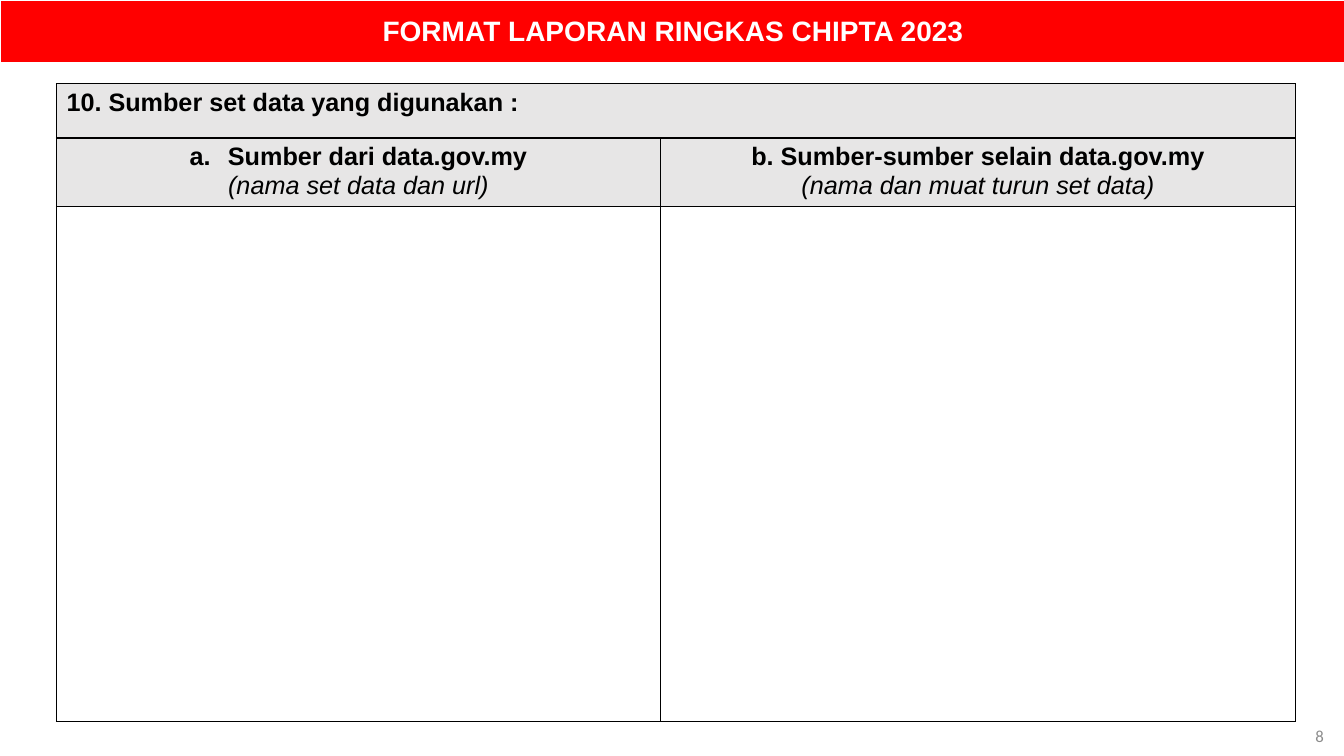
"""Build the data source form slide of the CHIPTA 2023 short report."""
from lxml import etree
from pptx import Presentation
from pptx.dml.color import RGBColor
from pptx.enum.text import MSO_ANCHOR, PP_ALIGN
from pptx.oxml.ns import qn
from pptx.util import Inches, Pt

LEFT, CENTER, RIGHT = PP_ALIGN.LEFT, PP_ALIGN.CENTER, PP_ALIGN.RIGHT
TOP, MIDDLE = MSO_ANCHOR.TOP, MSO_ANCHOR.MIDDLE
BLANK_LAYOUT = 6

BLACK, WHITE, RED, PALE, GREY = "000000", "FFFFFF", "FF0000", "E7E6E6", "8C8C8C"
BOLD = {"name": "Arial", "size": Pt(18), "bold": True}
ITALIC = {"name": "Arial", "size": Pt(18), "italic": True}
BANNER_FONT = {"name": "Arial", "size": Pt(20), "bold": True}
NUMBER_FONT = {"name": "Calibri", "size": Pt(12)}

BANNER = {
    "at": (0, 0), "columns": [13.35], "rows": [0.63],
    "borders": {"L": (WHITE, 1), "R": (WHITE, 1), "T": (WHITE, 1), "B": (WHITE, 3)},
    "fills": [RED], "anchor": MIDDLE,
    "cells": [[[("FORMAT LAPORAN RINGKAS CHIPTA 2023", BANNER_FONT, WHITE, CENTER)]]],
}
FORM = {
    "at": (0.56, 0.83), "columns": [5.99, 6.3], "rows": [0.54, 0.68, 5.11],
    "borders": {side: (BLACK, 1) for side in "LRTB"},
    "fills": [PALE, PALE, WHITE], "anchor": TOP,
    "cells": [
        [[("10. Sumber set data yang digunakan :", BOLD, BLACK, LEFT)], []],
        [[("Sumber dari data.gov.my", BOLD, BLACK, CENTER),
          ("(nama set data dan url)", ITALIC, BLACK, CENTER)],
         [("b. Sumber-sumber selain data.gov.my", BOLD, BLACK, CENTER),
          ("(nama dan muat turun set data)", ITALIC, BLACK, CENTER)]],
        [[], []],
    ],
}
PAGE_NUMBER = [("8", NUMBER_FONT, GREY, RIGHT)]


def rgb(value):
    return RGBColor.from_string(value)


def write(frame, lines):
    for index, (text, style, color, align) in enumerate(lines):
        paragraph = frame.add_paragraph() if index else frame.paragraphs[0]
        paragraph.alignment = align
        run = paragraph.add_run()
        run.text = text
        run.font.color.rgb = rgb(color)
        for key, value in style.items():
            setattr(run.font, key, value)


def draw_borders(cell, borders):
    properties = cell._tc.get_or_add_tcPr()
    for side, (color, width) in borders.items():
        line = etree.SubElement(properties, qn(f"a:ln{side}"), w=str(Pt(width)))
        fill = etree.SubElement(line, qn("a:solidFill"))
        etree.SubElement(fill, qn("a:srgbClr"), val=color)


def add_grid(slide, content):
    columns, rows = content["columns"], content["rows"]
    left, top = content["at"]
    grid = slide.shapes.add_table(
        len(rows), len(columns), Inches(left), Inches(top),
        Inches(sum(columns)), Inches(sum(rows))).table
    grid.first_row = grid.horz_banding = False
    for column, width in zip(grid.columns, columns):
        column.width = Inches(width)
    for row, height, fill, row_cells in zip(grid.rows, rows, content["fills"], content["cells"]):
        row.height = Inches(height)
        for cell, lines in zip(row.cells, row_cells):
            draw_borders(cell, content["borders"])
            cell.fill.solid()
            cell.fill.fore_color.rgb = rgb(fill)
            cell.vertical_anchor = content["anchor"]
            write(cell.text_frame, lines)
    return grid


def letter_paragraph(paragraph):
    properties = paragraph._p.get_or_add_pPr()
    indent = Inches(0.38)
    properties.set("marL", str(indent))
    properties.set("indent", str(-indent))
    etree.SubElement(properties, qn("a:buFont"), typeface="+mj-lt")
    etree.SubElement(properties, qn("a:buAutoNum"), type="alphaLcPeriod")


def main():
    deck = Presentation()
    deck.slide_width, deck.slide_height = Inches(13.33), Inches(7.5)
    slide = deck.slides.add_slide(deck.slide_layouts[BLANK_LAYOUT])

    form = add_grid(slide, FORM)
    form.cell(0, 0).merge(form.cell(0, 1))
    letter_paragraph(form.cell(1, 0).text_frame.paragraphs[0])
    add_grid(slide, BANNER)

    number = slide.shapes.add_textbox(Inches(10.23), Inches(7.1), Inches(3), Inches(0.4))
    number.text_frame.word_wrap = True
    number.text_frame.vertical_anchor = MIDDLE
    write(number.text_frame, PAGE_NUMBER)

    deck.save("out.pptx")


if __name__ == "__main__":
    main()
